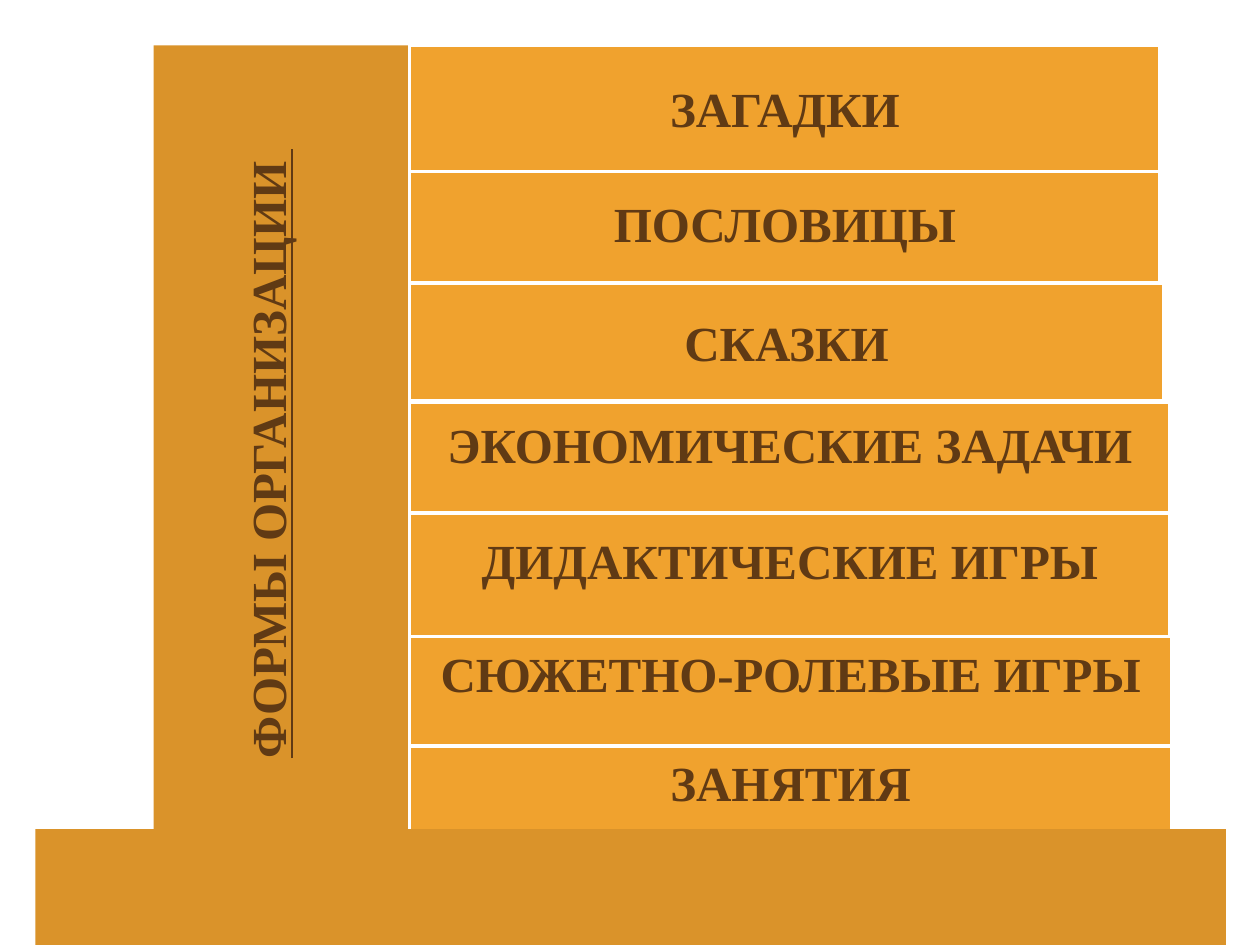
from pptx import Presentation
from pptx.dml.color import RGBColor
from pptx.enum.shapes import MSO_SHAPE
from pptx.enum.text import MSO_ANCHOR, PP_ALIGN
from pptx.util import Inches, Pt

RECTANGLE = MSO_SHAPE.RECTANGLE
CENTER = PP_ALIGN.CENTER
MIDDLE = MSO_ANCHOR.MIDDLE

SLIDE_W, SLIDE_H = Inches(10), Inches(7.5)
COLORS = {"frame": "DA932A", "bar": "F0A22E", "edge": "FFFFFF", "text": "603A14"}
INSET = Inches(0.12)
RAISED_INSET = Inches(0.34)  # lifts the text above the middle

# Label, then top, height and width in percent of the stack, and text raised or not
BARS = [
    ("ЗАГАДКИ", 0, 15.6, 98.5, False),
    ("ПОСЛОВИЦЫ", 14.6, 14.8, 98.5, False),
    ("СКАЗКИ", 29.4, 14.5, 98.9, False),
    ("ЭКОНОМИЧЕСКИЕ ЗАДАЧИ", 44.1, 13.7, 99.8, True),
    ("ДИДАКТИЧЕСКИЕ ИГРЫ", 57.5, 15.6, 99.8, True),
    ("СЮЖЕТНО-РОЛЕВЫЕ ИГРЫ", 72.1, 14.5, 100, True),
    ("ЗАНЯТИЯ", 85.6, 14.3, 100, True),
]


def share_box(left, top, width, height):
    """Turn percentages of the slide into a box."""
    return (int(SLIDE_W * left / 100), int(SLIDE_H * top / 100),
            int(SLIDE_W * width / 100), int(SLIDE_H * height / 100))


def add_block(slide, box, fill, edge=None):
    block = slide.shapes.add_shape(RECTANGLE, *box)
    block.shadow.inherit = False
    block.fill.solid()
    block.fill.fore_color.rgb = RGBColor.from_string(COLORS[fill])
    if edge:
        block.line.color.rgb = RGBColor.from_string(COLORS[edge])
        block.line.width = Pt(2)
    else:
        block.line.fill.background()
    return block


def write_text(block, text, size=28, underline=False, raised=False):
    frame = block.text_frame
    frame.word_wrap = True
    frame.vertical_anchor = MIDDLE
    frame.margin_left = frame.margin_right = frame.margin_top = INSET
    frame.margin_bottom = RAISED_INSET if raised else INSET
    paragraph = frame.paragraphs[0]
    paragraph.alignment = CENTER
    run = paragraph.add_run()
    run.text = text
    run.font.name = "Times New Roman"
    run.font.size = Pt(size)
    run.font.bold = True
    run.font.underline = underline
    run.font.color.rgb = RGBColor.from_string(COLORS["text"])


def add_pillar(slide, box):
    """Title block, turned a quarter to read upwards inside the box."""
    left, top, width, height = box
    shift = (height - width) // 2
    pillar = add_block(slide, (left - shift, top + shift, height, width), "frame")
    pillar.rotation = 270
    write_text(pillar, "ФОРМЫ ОРГАНИЗАЦИИ ", underline=True, raised=True)


def add_stack(slide, box):
    """Bars from the bottom up, each overlapping the one below."""
    left, top, width, height = box
    for label, offset, tall, wide, raised in reversed(BARS):
        bar_box = (left, top + int(height * offset / 100),
                   int(width * wide / 100), int(height * tall / 100))
        bar = add_block(slide, bar_box, "bar", edge="edge")
        write_text(bar, label, raised=raised)


def add_base(slide, box):
    add_block(slide, box, "frame")


def main():
    deck = Presentation()
    deck.slide_width, deck.slide_height = SLIDE_W, SLIDE_H
    slide = deck.slides.add_slide(deck.slide_layouts[6])
    add_pillar(slide, share_box(12.2, 4.8, 20.2, 86.4))
    add_stack(slide, share_box(32.5, 4.8, 60.5, 85.6))
    add_base(slide, share_box(2.8, 87.73, 94.5, 12.27))
    deck.save("out.pptx")


if __name__ == "__main__":
    main()
